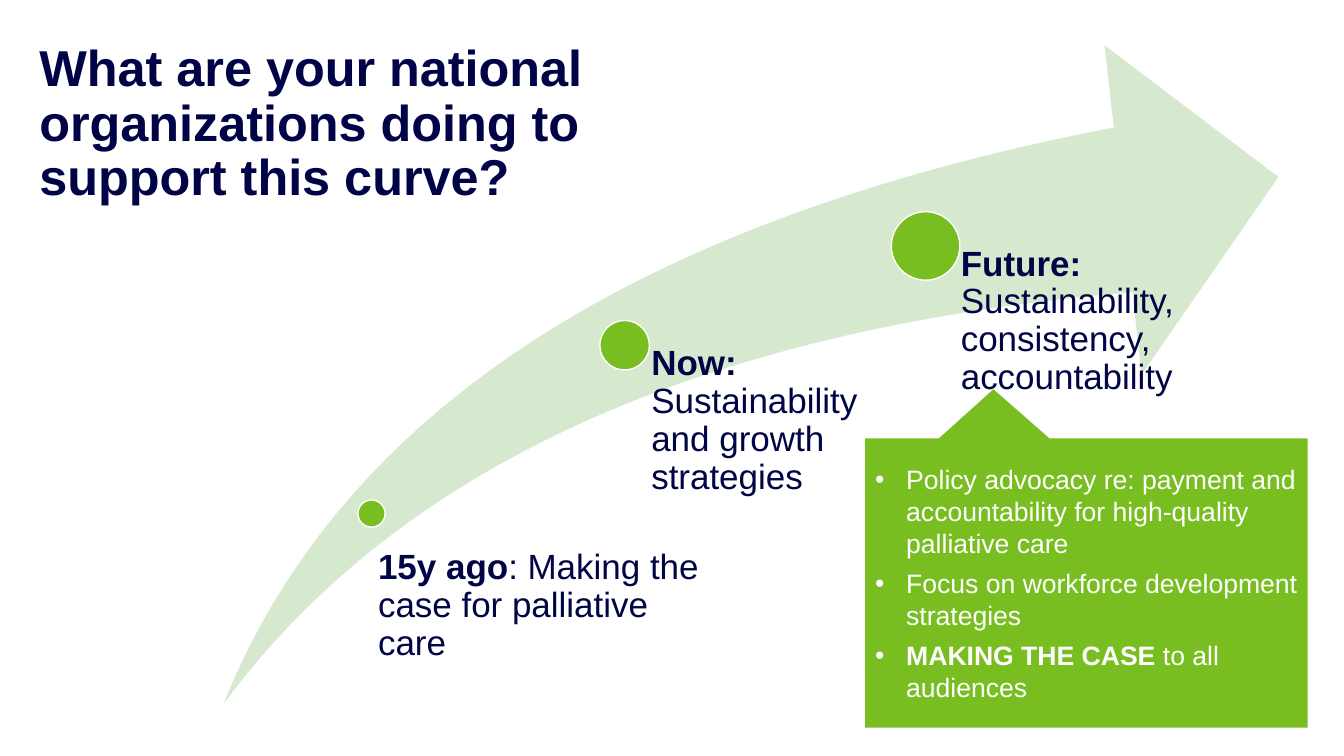
import pptx
import pptx.dml.color
import pptx.enum.shapes
import pptx.enum.text
import pptx.oxml.ns
import pptx.util
from lxml import etree

Inches = pptx.util.Inches
RGBColor = pptx.dml.color.RGBColor
SHAPES = pptx.enum.shapes.MSO_SHAPE
ANCHOR = pptx.enum.text.MSO_ANCHOR
ALIGN = pptx.enum.text.PP_ALIGN

TITLE_NAVY = RGBColor(0x00, 0x04, 0x46)
TEXT_NAVY = RGBColor(0x00, 0x05, 0x45)
GREEN = RGBColor(0x78, 0xBE, 0x20)
PALE_GREEN = RGBColor(0xD6, 0xE8, 0xCD)
WHITE = RGBColor(0xFF, 0xFF, 0xFF)

# Dot position and diameter, label box, label inset, bold lead, rest
MILESTONES = [
    ((3.55, 4.96), 0.27, (3.61, 5.45, 3.38, 1.77), 0.14,
     "15y ago", ": Making the case for palliative care"),
    ((5.95, 3.18), 0.49, (6.2, 3.43, 2.51, 3.55), 0.26,
     "Now: ", "Sustainability and growth strategies"),
    ((8.84, 2.1), 0.68, (9.17, 2.44, 2.51, 4.54), 0.36,
     "Future: ", "Sustainability, consistency, accountability"),
]

# Bold lead, rest
ADVOCACY_POINTS = [
    ("", "Policy advocacy re: payment and accountability for high-quality palliative care"),
    ("", "Focus on workforce development strategies"),
    ("MAKING THE CASE ", "to all audiences"),
]


class SlideBuilder:
    font_name = "Arial"

    def __init__(self, slide):
        self.slide = slide

    def add_words(self, paragraph, lead, rest, size, color):
        """Fill a paragraph with a bold lead followed by regular text."""
        paragraph.alignment = ALIGN.LEFT
        for text, bold in ((lead, True), (rest, False)):
            if text:
                run = paragraph.add_run()
                run.text = text
                run.font.name = self.font_name
                run.font.size = pptx.util.Pt(size)
                run.font.bold = bold
                run.font.color.rgb = color

    def prepare_frame(self, text_frame, anchor, left=0.0, right=0.0, vertical=0.0):
        text_frame.word_wrap = True
        text_frame.auto_size = pptx.enum.text.MSO_AUTO_SIZE.NONE
        text_frame.vertical_anchor = anchor
        text_frame.margin_left, text_frame.margin_right = Inches(left), Inches(right)
        text_frame.margin_top = text_frame.margin_bottom = Inches(vertical)

    def title(self, text, box):
        title = self.slide.shapes.title
        title.left, title.top, title.width, title.height = map(Inches, box)
        self.prepare_frame(title.text_frame, ANCHOR.TOP)
        paragraph = title.text_frame.paragraphs[0]
        paragraph.line_spacing = 0.9
        self.add_words(paragraph, text, "", 36, TITLE_NAVY)

    def shape(self, kind, box, fill, outline=None, adjustments=()):
        shape = self.slide.shapes.add_shape(kind, *map(Inches, box))
        shape.shadow.inherit = False
        shape.fill.solid()
        shape.fill.fore_color.rgb = fill
        if outline is None:
            shape.line.fill.background()
        else:
            shape.line.color.rgb = outline
            shape.line.width = pptx.util.Pt(1)
        for index, value in enumerate(adjustments):
            shape.adjustments[index] = value
        return shape

    def milestone(self, position, diameter, box, inset, lead, rest):
        self.shape(SHAPES.OVAL, (*position, diameter, diameter), GREEN, WHITE)
        text_frame = self.slide.shapes.add_textbox(*map(Inches, box)).text_frame
        self.prepare_frame(text_frame, ANCHOR.TOP, left=inset)
        paragraph = text_frame.paragraphs[0]
        paragraph.line_spacing = 0.9
        self.add_words(paragraph, lead, rest, 25, TEXT_NAVY)

    def bullet(self, paragraph):
        properties = paragraph._p.get_or_add_pPr()
        properties.set("marL", str(Inches(0.31)))
        properties.set("indent", str(-Inches(0.31)))
        for tag, name, value in (("a:buFont", "typeface", self.font_name),
                                 ("a:buChar", "char", "•")):
            element = etree.SubElement(properties, pptx.oxml.ns.qn(tag))
            element.set(name, value)

    def callout(self, box, pointer, points):
        shape = self.shape(SHAPES.RECTANGULAR_CALLOUT, box, GREEN, adjustments=pointer)
        text_frame = shape.text_frame
        self.prepare_frame(text_frame, ANCHOR.MIDDLE, left=0.1, right=0.1, vertical=0.05)
        for index, (lead, rest) in enumerate(points):
            paragraph = text_frame.add_paragraph() if index else text_frame.paragraphs[0]
            self.bullet(paragraph)
            paragraph.space_after = pptx.util.Pt(6)
            self.add_words(paragraph, lead, rest, 19, WHITE)


def main():
    presentation = pptx.Presentation()
    presentation.slide_width = Inches(13.33)
    presentation.slide_height = Inches(7.5)
    title_only = presentation.slide_layouts[5]
    builder = SlideBuilder(presentation.slides.add_slide(title_only))

    builder.title("What are your national organizations doing to support this curve?",
                  (0.39, 0.43, 5.93, 3.33))
    builder.shape(SHAPES.SWOOSH_ARROW, (2.22, 0.45, 10.46, 6.53), PALE_GREEN,
                  adjustments=(0.25, 0.25))
    for milestone in MILESTONES:
        builder.milestone(*milestone)
    builder.callout((8.58, 4.35, 4.39, 2.87), (-0.21, -0.67), ADVOCACY_POINTS)

    presentation.save("out.pptx")


if __name__ == "__main__":
    main()
